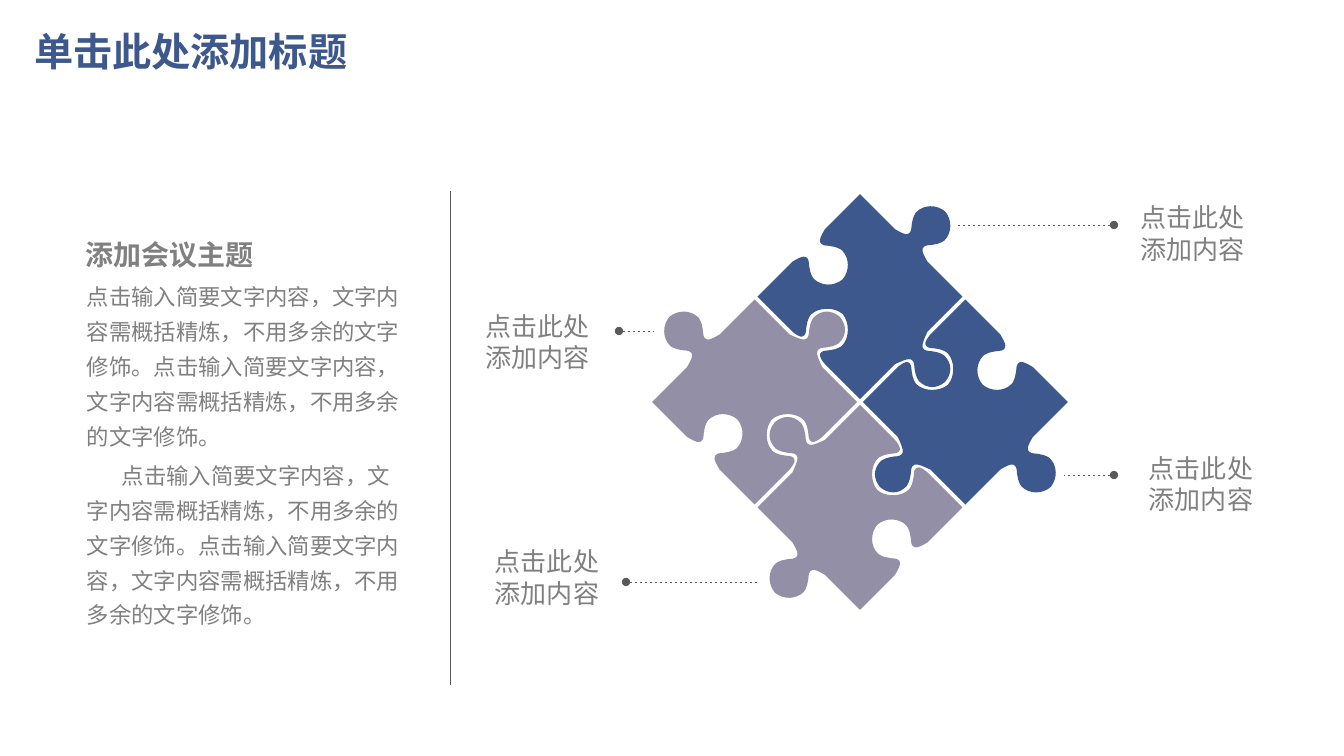
import math

import lxml.etree
import pptx
import pptx.dml.color
import pptx.enum.dml
import pptx.enum.shapes
import pptx.enum.text
import pptx.oxml.ns
import pptx.util

PX = 914400 / 100.8
CJK = "Noto Sans CJK SC"
NAVY, MAUVE, GREY, DARK = "3D588C", "938FA7", "808080", "595959"
BODY_STYLE = {"name": CJK, "size": 16, "color": GREY}
HEADING_STYLE = {"name": CJK, "size": 20, "color": GREY, "bold": True}
LABEL_STYLE = {"name": CJK, "size": 18.6, "color": GREY}
TITLE_STYLE = {"name": "Montserrat", "size": 28, "color": NAVY, "bold": True}
SUMMARY = "点击输入简要文字内容，文字内容需概括精炼，不用多余的文字修饰。"
LABEL = ["点击此处", "添加内容"]
CALLOUTS = [
    (476, 305, 619, 654, 331),
    (1131, 197, 1114, 957, 225),
    (485, 541, 626, 758, 582),
    (1139, 447, 1114, 1064, 475),
]
PIECE_COLORS = [NAVY, NAVY, MAUVE, MAUVE]
PIECE_SIDE, PIECE_GAP = 145, 4
HALF_KNOB = [
    (-23, 0),
    (-11, 3), (-10, 5), (-10, 8),
    (-10, 11), (-14, 14), (-15, 16),
    (-19, 21), (-20, 26), (-20, 27),
    (-20, 38), (-11, 47), (0, 48),
]
KNOBS = [(1, 0), (1, -2), (-1, 2), (-1, 0)]


def emu(*lengths):
    return [pptx.util.Emu(round(length * PX)) for length in lengths]


def rgb(value):
    return pptx.dml.color.RGBColor.from_string(value)


def add_element(parent, tag, **attributes):
    element = lxml.etree.SubElement(parent, pptx.oxml.ns.qn(tag))
    for key, value in attributes.items():
        element.set(key, value)
    return element


def write_lines(frame, lines, style, **paragraph_format):
    for index, line in enumerate(lines):
        paragraph = frame.paragraphs[0] if index == 0 else frame.add_paragraph()
        for key, value in paragraph_format.items():
            setattr(paragraph, key, value)
        run = paragraph.add_run()
        run.text = line
        for key, value in style.items():
            if key == "color":
                run.font.color.rgb = rgb(value)
            else:
                setattr(run.font, key, pptx.util.Pt(value) if key == "size" else value)
        add_element(run.font._element, "a:ea", typeface=CJK)


def add_text(slide, box, lines, style, wrap=True, **paragraph_format):
    frame = slide.shapes.add_textbox(*emu(*box)).text_frame
    frame.word_wrap = wrap
    write_lines(frame, lines, style, **paragraph_format)
    return frame


def add_rule(slide, start, end, width):
    rule = slide.shapes.add_connector(
        pptx.enum.shapes.MSO_CONNECTOR.STRAIGHT, *emu(*start, *end))
    rule.line.color.rgb = rgb(DARK)
    rule.line.width = pptx.util.Pt(width)
    add_element(rule._element.spPr, "a:effectLst")
    return rule


def add_title(slide, box, text):
    title = slide.shapes.title
    for key, value in zip(("left", "top", "width", "height"), emu(*box)):
        setattr(title, key, value)
    title.text_frame.auto_size = pptx.enum.text.MSO_AUTO_SIZE.NONE
    title.text_frame.vertical_anchor = pptx.enum.text.MSO_ANCHOR.MIDDLE
    write_lines(title.text_frame, [text], TITLE_STYLE, line_spacing=0.9,
                alignment=pptx.enum.text.PP_ALIGN.LEFT)


def add_topic(slide, box):
    left, top, width, height = box
    add_text(slide, (left - 19, top - 37, 224, 39), ["添加会议主题"], HEADING_STYLE,
             alignment=pptx.enum.text.PP_ALIGN.CENTER)
    passages = add_text(slide, box, [SUMMARY * 2] * 2, BODY_STYLE, line_spacing=1.3)
    second = passages.paragraphs[1]
    second.space_before = pptx.util.Pt(3)
    second._p.get_or_add_pPr().set("indent", str(emu(35)[0]))
    divider = left + width + 31
    add_rule(slide, (divider, top + 415), (divider, top - 79), 0.25)


def turn(x, y, degrees):
    cos, sin = math.cos(math.radians(degrees)), math.sin(math.radians(degrees))
    return x * cos - y * sin, x * sin + y * cos


def knob_points(widen):
    reach = HALF_KNOB[-1][1]
    half = [(along - widen, depth - widen) if 0 < depth < reach - 1 else (along, depth)
            for along, depth in HALF_KNOB]
    return half + [(-along, depth) for along, depth in half[-2::-1]]


def piece_outline():
    edge = PIECE_SIDE / 2
    middle = (PIECE_SIDE + PIECE_GAP) / 2
    segments = []
    for side, (direction, widen) in enumerate(KNOBS):
        points = [(-edge, 0)] + knob_points(widen)
        placed = []
        for along, depth in points:
            x, y = turn(edge + direction * depth, along, 90 * side)
            placed.append((x + middle, y - middle))
        segments += [placed[:1], placed[1:2]]
        segments += [placed[i:i + 3] for i in range(2, len(placed), 3)]
    return segments


def add_piece(slide, hub, quarter, color):
    outline = piece_outline()
    points = [emu(*turn(*point, 90 * quarter)) for segment in outline for point in segment]
    builder = slide.shapes.build_freeform(*points[0], scale=1.0)
    builder.add_line_segments(points[1:], close=True)
    piece = builder.convert_to_shape()
    steps = iter(list(piece._element.iter(pptx.oxml.ns.qn("a:lnTo"))))
    for segment in outline[1:]:
        first = next(steps)
        if len(segment) == 3:
            curve = lxml.etree.Element(pptx.oxml.ns.qn("a:cubicBezTo"))
            first.addprevious(curve)
            for step in (first, next(steps), next(steps)):
                curve.append(step[0])
                step.getparent().remove(step)
    center = turn(piece.left + piece.width / 2, piece.top + piece.height / 2, -45)
    hub_x, hub_y = emu(*hub)
    piece.left = round(hub_x + center[0] - piece.width / 2)
    piece.top = round(hub_y + center[1] - piece.height / 2)
    piece.rotation = 315
    piece.shadow.inherit = False
    piece.fill.solid()
    piece.fill.fore_color.rgb = rgb(color)
    piece.line.fill.background()


def add_puzzle(slide, box):
    left, top, width, height = box
    for quarter, color in enumerate(PIECE_COLORS):
        add_piece(slide, (left + width / 2, top + height / 2), quarter, color)


def add_callout(slide, box, dot, tip, level):
    rule = add_rule(slide, (dot, level), (tip, level), 0.5)
    rule.line.dash_style = pptx.enum.dml.MSO_LINE.DASH
    add_element(rule.line._get_or_add_ln(), "a:headEnd", type="oval")
    label = add_text(slide, box, LABEL, LABEL_STYLE, wrap=False)
    label.auto_size = pptx.enum.text.MSO_AUTO_SIZE.SHAPE_TO_FIT_TEXT


def main():
    deck = pptx.Presentation()
    deck.slide_width, deck.slide_height = emu(1344, 756)
    slide = deck.slides.add_slide(deck.slide_layouts[5])
    add_title(slide, (24, 24, 1159, 60), "单击此处添加标题")
    add_topic(slide, (77, 270, 342, 375))
    add_puzzle(slide, (652, 194, 416, 416))
    for left, top, dot, tip, level in CALLOUTS:
        add_callout(slide, (left, top, 126, 73), dot, tip, level)
    deck.save("out.pptx")


if __name__ == "__main__":
    main()
